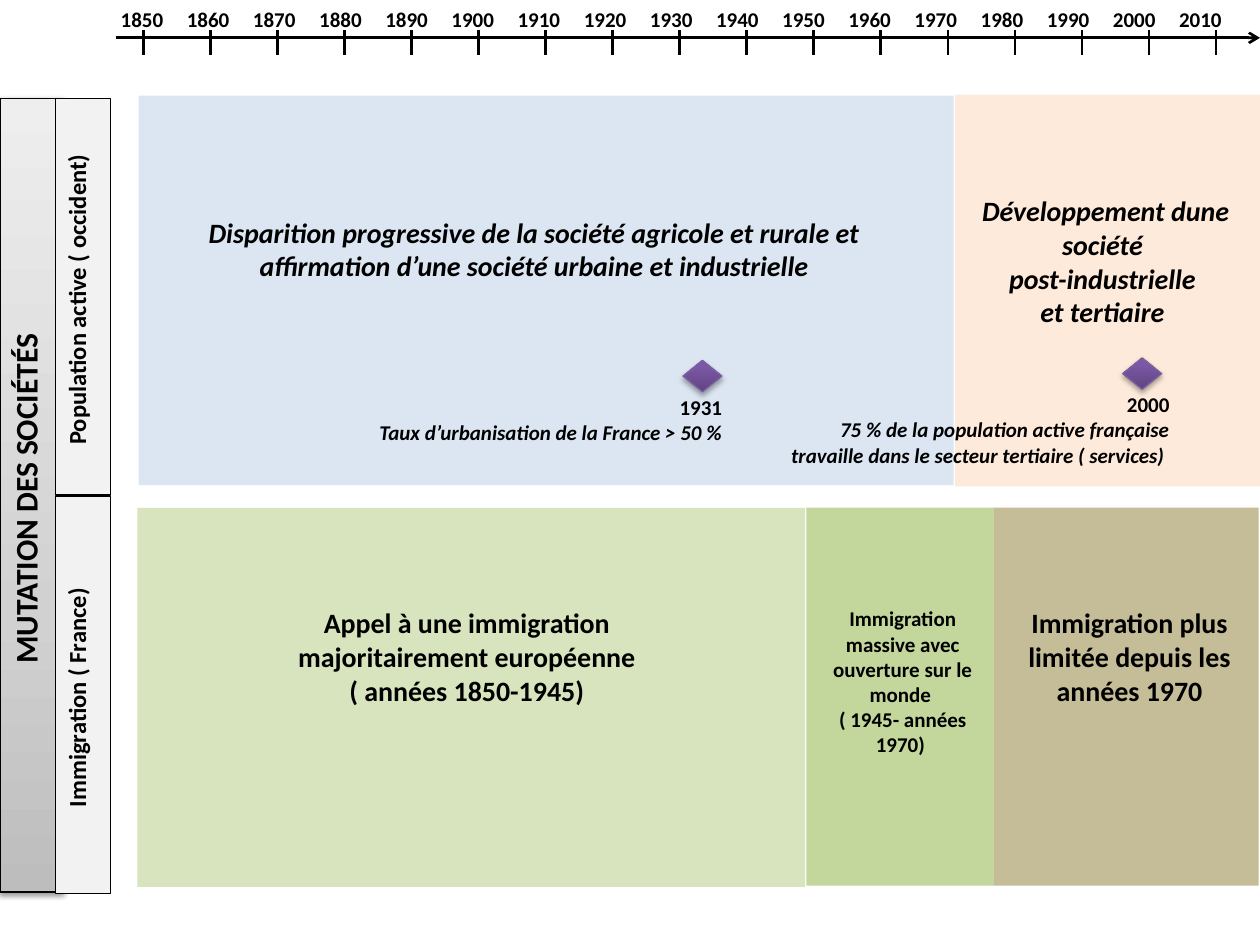
"""Build a timeline slide on the transformation of societies since 1850."""
from dataclasses import dataclass

import lxml.etree as etree
import pptx
import pptx.dml.color
import pptx.enum.shapes
import pptx.enum.text
import pptx.oxml.ns
import pptx.util

Inches = pptx.util.Inches
Pt = pptx.util.Pt
qn = pptx.oxml.ns.qn
MSO_SHAPE = pptx.enum.shapes.MSO_SHAPE
PP_ALIGN = pptx.enum.text.PP_ALIGN

Box = tuple[float, float, float, float]
Stops = list[tuple[int, str]]

BLACK = "000000"
GREY_STOPS = [(0, "BDBDBD"), (35, "D1D1D1"), (100, "EEEEEE")]
PURPLE_STOPS = [(0, "5F4480"), (80, "7B58A6"), (100, "7C57A8")]
FIRST_TICK, LAST_TICK = 1.14, 9.65
YEARS = range(1850, 2011, 10)
LABEL_STEP = 0.525


@dataclass
class Band:
    box: Box
    fill: str


@dataclass
class Note:
    box: Box
    lines: list[str]
    size: int
    align: PP_ALIGN = PP_ALIGN.CENTER
    italic_from: int | None = None


@dataclass
class SideLabel:
    box: Box
    text: str
    size: int
    fill: str | None = None


BANDS = [
    Band((7.58, 0.75, 2.42, 3.11), "FDEADA"),
    Band((1.1, 0.76, 6.47, 3.09), "DCE6F2"),
    Band((1.09, 4.03, 5.3, 3.01), "D7E4BD"),
    Band((6.4, 4.03, 1.49, 3), "C3D69B"),
    Band((7.89, 4.03, 2.1, 3), "C4BD97"),
]
NOTES = [
    Note((1.05, 1.66, 6.43, 0.64),
         ["Disparition progressive de la société agricole et rurale et ",
          "affirmation d’une société urbaine et industrielle "], 16, italic_from=0),
    Note((7.55, 1.49, 2.45, 1.18),
         ["Développement dune société ", "post-industrielle ", "et tertiaire "],
         16, italic_from=0),
    Note((2.76, 3.08, 3.07, 0.51),
         ["1931", "Taux d’urbanisation de la France > 50 %"],
         12, PP_ALIGN.RIGHT, 1),
    Note((5.98, 3.06, 3.4, 0.71),
         ["2000", "75 % de la population active française travaille "
          "dans le secteur tertiaire ( services) "], 12, PP_ALIGN.RIGHT, 1),
    Note((1.07, 4.76, 5.32, 0.91),
         ["Appel à une immigration ", "majoritairement européenne ",
          "( années 1850-1945) "], 16),
    Note((6.4, 4.76, 1.53, 1.31),
         ["Immigration massive avec ouverture sur le monde ",
          "( 1945- années 1970) "], 12),
    Note((7.93, 4.76, 2.07, 0.91),
         ["Immigration plus limitée depuis les années 1970"], 16),
]
SIDE_LABELS = [
    SideLabel((0, 0.78, 0.5, 6.3), "MUTATION DES SOCIÉTÉS ", 18),
    SideLabel((0.44, 0.78, 0.44, 3.15), "Population active ( occident) ", 14, "F2F2F2"),
    SideLabel((0.44, 3.94, 0.44, 3.15), "Immigration ( France) ", 14, "F2F2F2"),
]
MILESTONES = [(5.42, 2.86), (8.91, 2.84)]


def rgb(value: str) -> pptx.dml.color.RGBColor:
    return pptx.dml.color.RGBColor.from_string(value)


def add_shape(slide, kind: MSO_SHAPE, box: Box, fill: str | None = None,
              line: str | None = None):
    s = slide.shapes.add_shape(kind, *map(Inches, box))
    s.shadow.inherit = False
    if fill:
        s.fill.solid()
        s.fill.fore_color.rgb = rgb(fill)
    if line:
        s.line.color.rgb = rgb(line)
        s.line.width = Pt(0.75)
    else:
        s.line.fill.background()
    return s


def add_color(parent, value: str):
    return etree.SubElement(parent, qn("a:srgbClr"), val=value)


def add_relief(s, stops: Stops, opacity: int, distance: float) -> None:
    s.fill.gradient()
    s.fill.gradient_angle = 90
    props = s.element.spPr
    stop_list = props.find(qn("a:gradFill")).find(qn("a:gsLst"))
    for old in list(stop_list):
        stop_list.remove(old)
    for position, value in stops:
        add_color(etree.SubElement(stop_list, qn("a:gs"), pos=str(position * 1000)), value)
    shadow = etree.SubElement(
        props.find(qn("a:effectLst")), qn("a:outerShdw"), blurRad=str(Pt(3.1)),
        dist=str(Pt(distance)), dir="5400000", rotWithShape="0")
    etree.SubElement(add_color(shadow, BLACK), qn("a:alpha"), val=str(opacity * 1000))


def write(p, text: str, size: int, align: PP_ALIGN, italic: bool = False) -> None:
    p.add_run().text = text
    p.alignment = align
    p.font.name = "Calibri"
    p.font.size = Pt(size)
    p.font.bold = True
    p.font.italic = italic
    p.font.color.rgb = rgb(BLACK)


def add_note(slide, note: Note):
    tf = slide.shapes.add_textbox(*map(Inches, note.box)).text_frame
    tf.word_wrap = True
    tf.auto_size = pptx.enum.text.MSO_AUTO_SIZE.SHAPE_TO_FIT_TEXT
    for i, text in enumerate(note.lines):
        p = tf.paragraphs[0] if i == 0 else tf.add_paragraph()
        italic = note.italic_from is not None and i >= note.italic_from
        write(p, text, note.size, note.align, italic)
    return tf


def add_side_label(slide, label: SideLabel) -> None:
    s = add_shape(slide, MSO_SHAPE.RECTANGLE, label.box, label.fill, BLACK)
    if label.fill is None:
        add_relief(s, GREY_STOPS, 38, 1.6)
    tf = s.text_frame
    tf.word_wrap = True
    tf.vertical_anchor = pptx.enum.text.MSO_ANCHOR.TOP
    tf._txBody.bodyPr.set("vert", "vert270")
    write(tf.paragraphs[0], label.text, label.size, PP_ALIGN.CENTER)


def add_line(slide, x1: float, y1: float, x2: float, y2: float, arrow: bool = False) -> None:
    s = slide.shapes.add_connector(
        pptx.enum.shapes.MSO_CONNECTOR.STRAIGHT, *map(Inches, (x1, y1, x2, y2)))
    s.line.color.rgb = rgb(BLACK)
    s.line.width = Pt(1.5)
    props = s.element.spPr
    if arrow:
        etree.SubElement(props.find(qn("a:ln")), qn("a:tailEnd"), type="arrow")
    etree.SubElement(props, qn("a:effectLst"))


def add_axis(slide) -> None:
    years = Note((0.86, 0, 9.14, 0.3), ["\t".join(map(str, YEARS))], 12, PP_ALIGN.LEFT)
    p = add_note(slide, years).paragraphs[0]
    tabs = etree.Element(qn("a:tabLst"))
    for i in range(1, len(YEARS)):
        etree.SubElement(tabs, qn("a:tab"), pos=str(Inches(i * LABEL_STEP)), algn="l")
    p._p.get_or_add_pPr().insert(0, tabs)
    add_line(slide, 0.92, 0.3, 10, 0.3, arrow=True)
    step = (LAST_TICK - FIRST_TICK) / (len(YEARS) - 1)
    for i in range(len(YEARS)):
        x = FIRST_TICK + i * step
        add_line(slide, x, 0.24, x, 0.44)


def main() -> None:
    prs = pptx.Presentation()
    prs.slide_width, prs.slide_height = Inches(10), Inches(7.5)
    slide = prs.slides.add_slide(prs.slide_layouts[6])
    for band in BANDS:
        add_shape(slide, MSO_SHAPE.RECTANGLE, band.box, band.fill)
    for note in NOTES:
        add_note(slide, note)
    for label in SIDE_LABELS:
        add_side_label(slide, label)
    add_axis(slide)
    for x, y in MILESTONES:
        s = add_shape(slide, MSO_SHAPE.FLOWCHART_DECISION, (x, y, 0.31, 0.25), line="7D60A0")
        add_relief(s, PURPLE_STOPS, 35, 1.8)
    prs.save("out.pptx")


if __name__ == "__main__":
    main()
